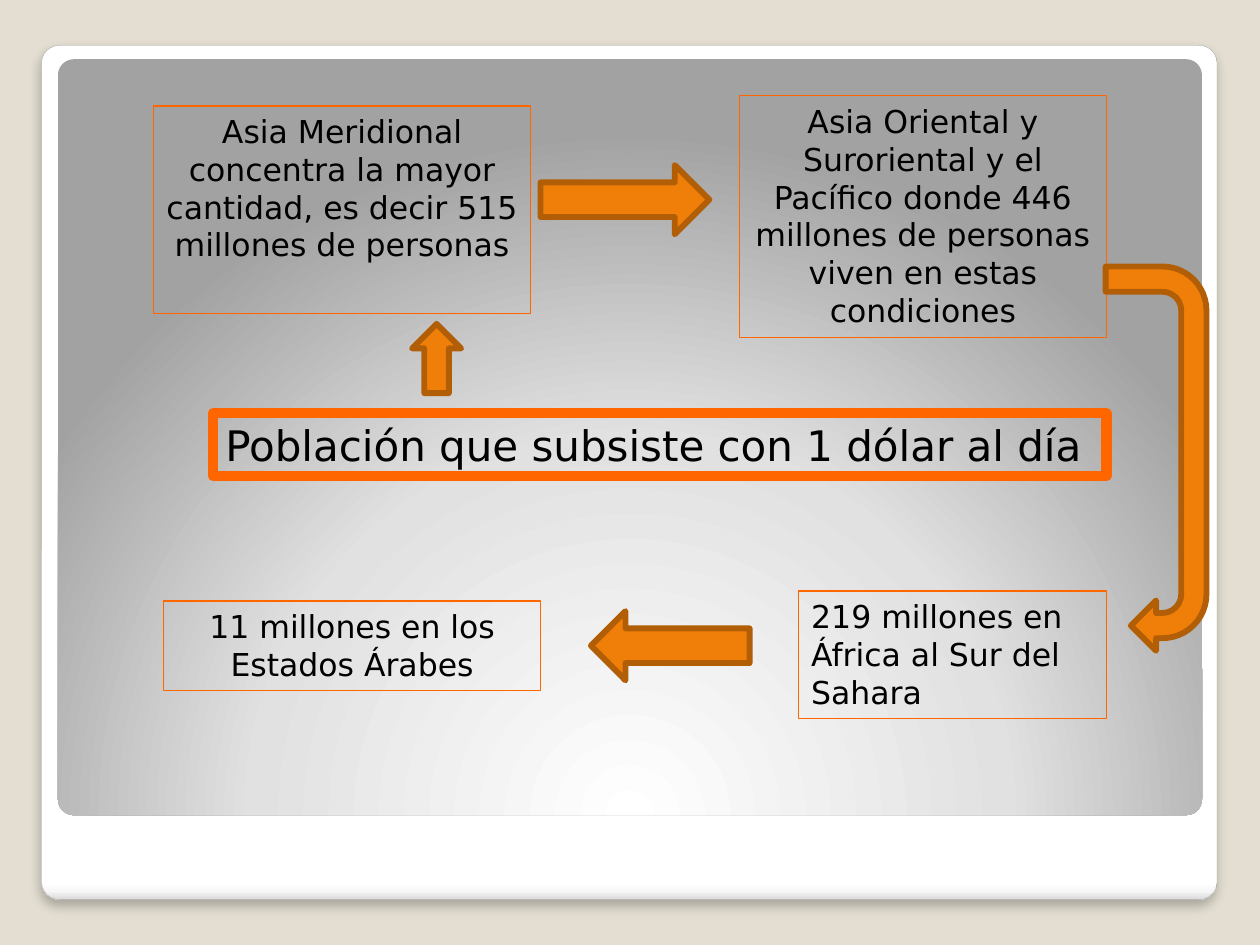
from lxml.etree import SubElement
from pptx import Presentation
from pptx.dml.color import RGBColor
from pptx.enum.shapes import MSO_SHAPE
from pptx.enum.text import PP_ALIGN
from pptx.oxml.ns import qn
from pptx.util import Inches, Pt

FONT = "DejaVu Sans"
# text, (left, top, width, height), alignment, text size, line width, wraps
BOXES = [
    ("Asia Meridional concentra la mayor cantidad, es decir 515 millones de personas",
     (1.22, 0.84, 2.99, 1.65), PP_ALIGN.CENTER, 18, 0.75, True),
    ("Población que subsiste con 1 dólar al día",
     (1.69, 3.28, 7.09, 0.5), PP_ALIGN.LEFT, 24, 6, False),
    ("Asia Oriental y Suroriental y el Pacífico donde 446 millones de personas "
     "viven en estas condiciones",
     (5.87, 0.76, 2.91, 1.92), PP_ALIGN.CENTER, 18, 0.75, True),
    ("219 millones en África al Sur del Sahara",
     (6.34, 4.69, 2.44, 1.01), PP_ALIGN.LEFT, 18, 0.75, True),
    ("11 millones en los Estados Árabes",
     (1.3, 4.77, 2.99, 0.71), PP_ALIGN.CENTER, 18, 0.75, True),
]
# preset, (left, top, width, height), rotation
ARROWS = [
    (MSO_SHAPE.UP_ARROW, (3.27, 2.57, 0.39, 0.55), 0),
    (MSO_SHAPE.RIGHT_ARROW, (4.29, 1.31, 1.34, 0.55), 0),
    (MSO_SHAPE.U_TURN_ARROW, (7.65, 3.24, 3.05, 0.8), 90),
    (MSO_SHAPE.LEFT_ARROW, (4.69, 4.85, 1.26, 0.55), 0),
]
FRAME_STOPS = [(0, "FFFFFF"), (98, "FFFFFF"), (99, "F7F7F7"), (100, "DADADA")]
PANEL_STOPS = [(0, "FFFFFF"), (55, "E1E1E1"), (100, "A2A2A2")]


def color(value):
    return RGBColor.from_string(value)


def set_line(shape, value, width):
    shape.line.color.rgb = color(value)
    shape.line.width = Pt(width)


def add_node(parent, tag, **attributes):
    return SubElement(parent, qn(tag), {k: str(v) for k, v in attributes.items()})


def add_plain_shape(page, preset, place):
    shape = page.shapes.add_shape(preset, *map(Inches, place))
    shape.shadow.inherit = False
    return shape


def set_gradient(shape, stops):
    """Fill with the stops and return the gradient node, still without direction."""
    shape.fill.gradient()
    gradient = shape._element.spPr.find(qn("a:gradFill"))
    for child in list(gradient):
        gradient.remove(child)
    stop_list = add_node(gradient, "a:gsLst")
    for position, value in stops:
        stop = add_node(stop_list, "a:gs", pos=position * 1000)
        add_node(stop, "a:srgbClr", val=value)
    return gradient


def add_rounded(page, place, stops):
    shape = add_plain_shape(page, MSO_SHAPE.ROUNDED_RECTANGLE, place)
    shape.adjustments[0] = 0.021
    return shape, set_gradient(shape, stops)


def add_backdrop(page):
    frame, gradient = add_rounded(page, (0.33, 0.36, 9.33, 6.78), FRAME_STOPS)
    add_node(gradient, "a:lin", ang=90 * 60000, scaled=0)
    set_line(frame, "A4A4A4", 0.16)
    effects = frame._element.spPr.find(qn("a:effectLst"))
    shadow = add_node(effects, "a:outerShdw", blurRad=Pt(6), dist=Pt(4),
                      dir=90 * 60000, algn="tl", rotWithShape=0)
    add_node(add_node(shadow, "a:srgbClr", val="000000"), "a:alpha", val=25000)

    panel, gradient = add_rounded(page, (0.46, 0.47, 9.08, 6), PANEL_STOPS)
    center = add_node(gradient, "a:path", path="circle")
    add_node(center, "a:fillToRect", l=50000, t=175000, r=50000, b=-75000)
    panel.line.fill.background()


def add_box(page, text, place, alignment, size, line_width, wraps):
    box = page.shapes.add_textbox(*map(Inches, place))
    set_line(box, "FF6600", line_width)
    box.text_frame.word_wrap = wraps
    box.text_frame.text = text
    para = box.text_frame.paragraphs[0]
    para.alignment = alignment
    font = para.runs[0].font
    font.name, font.size = FONT, Pt(size)
    font.color.rgb = color("000000")


def add_arrow(page, preset, place, rotation):
    arrow = add_plain_shape(page, preset, place)
    arrow.rotation = rotation
    arrow.fill.solid()
    arrow.fill.fore_color.rgb = color("F07F09")
    set_line(arrow, "B25E07", 3.35)


def main():
    deck = Presentation()
    deck.slide_width, deck.slide_height = Inches(10), Inches(7.5)
    page = deck.slides.add_slide(deck.slide_layouts[6])
    page.background.fill.solid()
    page.background.fill.fore_color.rgb = color("E3DED1")
    add_backdrop(page)
    for box in BOXES:
        add_box(page, *box)
    for arrow in ARROWS:
        add_arrow(page, *arrow)
    deck.save("out.pptx")


if __name__ == "__main__":
    main()
